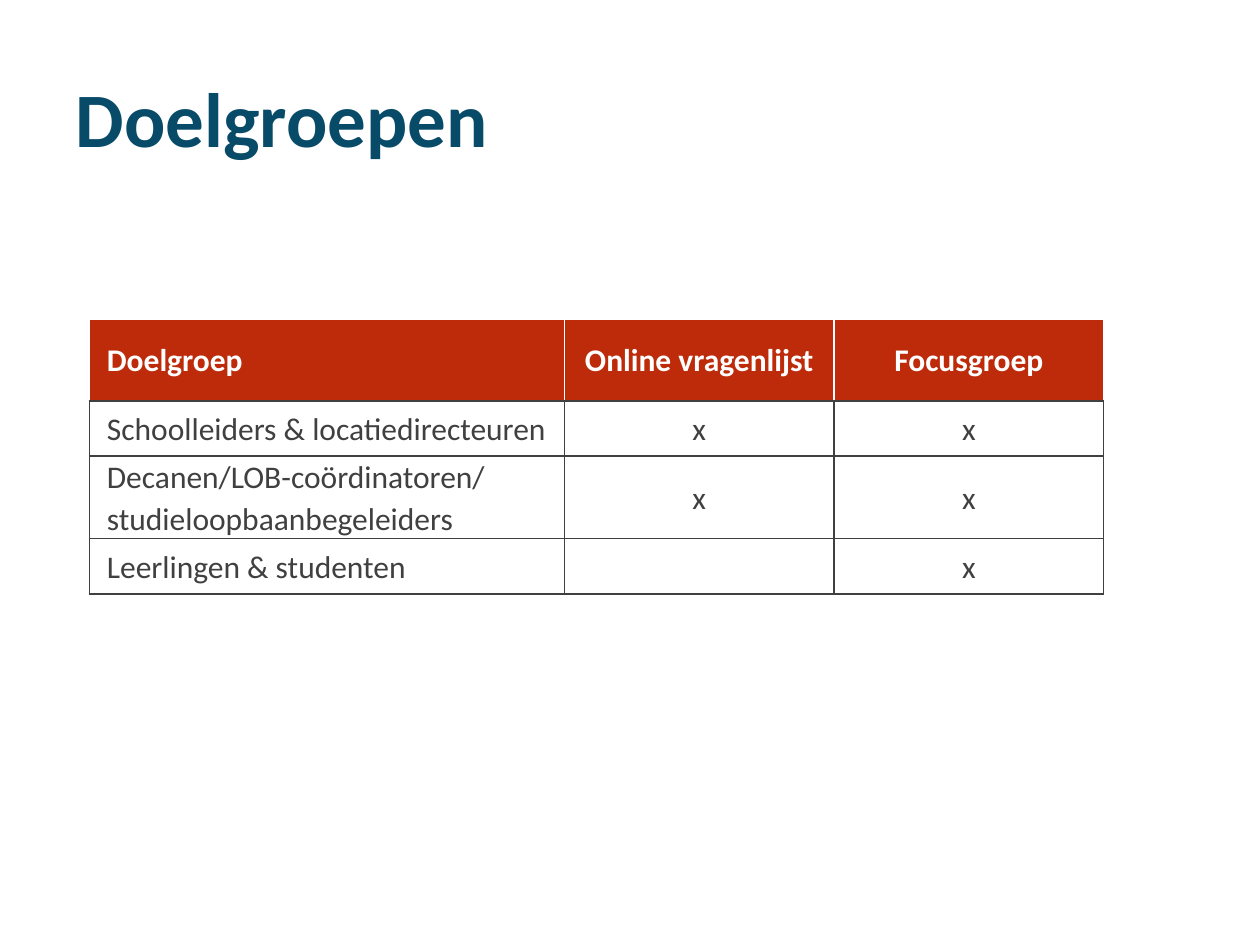
from lxml.etree import SubElement
from pptx import Presentation
from pptx.dml.color import RGBColor
from pptx.enum.text import MSO_ANCHOR, PP_ALIGN
from pptx.oxml.ns import qn
from pptx.util import Pt

TEAL, RED, GREY, WHITE = "074B68", "BD2B0B", "404040", "FFFFFF"
COLUMN_WIDTHS = [271.4, 154.1, 154.1]
ROW_HEIGHTS = [46.8, 31.7, 31.7, 31.7]
ROWS = [
    ["Doelgroep", "Online vragenlijst", "Focusgroep"],
    ["Schoolleiders & locatiedirecteuren", "x", "x"],
    ["Decanen/LOB-coördinatoren/\nstudieloopbaanbegeleiders", "x", "x"],
    ["Leerlingen & studenten", "", "x"],
]


def rgb(value):
    return RGBColor.from_string(value)


def set_attrs(obj, values):
    for name, value in values.items():
        setattr(obj, name, value)


def write(p, text, size, color, bold, **layout):
    p.text = text
    set_attrs(p, layout)
    for r in p.runs:
        set_attrs(r.font, {"name": "Calibri", "size": Pt(size), "bold": bold})
        r.font.color.rgb = rgb(color)


def set_borders(cell, colors):
    # Border lines come before the fill in the cell properties
    tcPr = cell._tc.get_or_add_tcPr()
    for i, (side, color) in enumerate(zip("LRTB", colors)):
        ln = SubElement(tcPr, qn(f"a:ln{side}"), w=str(Pt(1)))
        fill = SubElement(ln, qn("a:solidFill"))
        SubElement(fill, qn("a:srgbClr"), val=color)
        tcPr.insert(i, ln)


def add_title(s, text):
    sp = s.shapes.title
    set_attrs(sp, {"left": Pt(36), "top": Pt(21.6),
                   "width": Pt(648), "height": Pt(90)})
    tf = sp.text_frame
    set_attrs(tf, {"vertical_anchor": MSO_ANCHOR.MIDDLE, "word_wrap": True})
    write(tf.paragraphs[0], text, 44, TEAL, True, alignment=PP_ALIGN.LEFT)


def format_cell(cell, text, is_header, is_label):
    set_attrs(cell, {"vertical_anchor": MSO_ANCHOR.MIDDLE,
                     "margin_left": Pt(10), "margin_right": Pt(10),
                     "margin_top": 0, "margin_bottom": 0})
    if is_header:
        cell.fill.solid()
        cell.fill.fore_color.rgb = rgb(RED)
        set_borders(cell, [WHITE, WHITE, WHITE, GREY])
    else:
        cell.fill.background()
        set_borders(cell, [GREY] * 4)
    write(cell.text_frame.paragraphs[0], text, 18,
          WHITE if is_header else GREY, is_header,
          alignment=PP_ALIGN.LEFT if is_label else PP_ALIGN.CENTER,
          line_spacing=1.07, space_after=Pt(8))


def add_group_table(s):
    frame = s.shapes.add_table(len(ROWS), len(COLUMN_WIDTHS), Pt(51.1), Pt(182.2),
                               Pt(sum(COLUMN_WIDTHS)), Pt(sum(ROW_HEIGHTS)))
    table = frame.table
    set_attrs(table, {"first_row": True, "horz_banding": False})
    for column, width in zip(table.columns, COLUMN_WIDTHS):
        column.width = Pt(width)
    for row, height in zip(table.rows, ROW_HEIGHTS):
        row.height = Pt(height)
    for i, texts in enumerate(ROWS):
        for j, text in enumerate(texts):
            format_cell(table.cell(i, j), text, i == 0, j == 0)


def main():
    prs = Presentation()
    set_attrs(prs, {"slide_width": Pt(720), "slide_height": Pt(540)})
    s = prs.slides.add_slide(prs.slide_layouts[5])
    # Title
    add_title(s, "Doelgroepen")
    # Target groups by research method
    add_group_table(s)
    prs.save("out.pptx")


if __name__ == "__main__":
    main()
